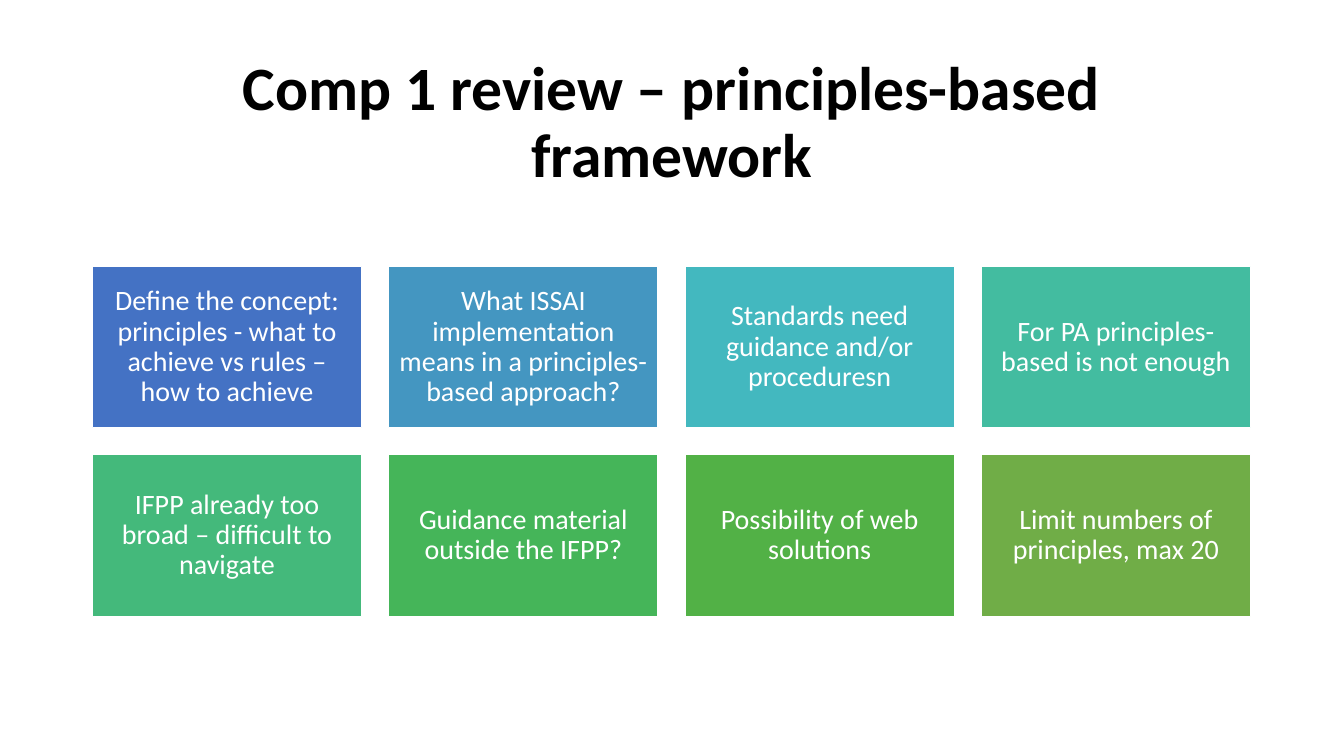
import pptx
import pptx.util
import pptx.dml.color
import pptx.enum.shapes
import pptx.enum.text

Pt = pptx.util.Pt

COLOURS = {
    "text": "000000",
    "white": "FFFFFF",
    "blue": "4472C4",
    "sky": "4496C1",
    "cyan": "43B8BF",
    "teal": "43BCA0",
    "mint": "44B97B",
    "emerald": "45B559",
    "green": "52B146",
    "olive": "70AD47",
}

POINTS = [
    ("blue", "Define the concept: principles - what to achieve vs rules – how to achieve"),
    ("sky", "What ISSAI implementation means in a principles-based approach?"),
    ("cyan", "Standards need guidance and/or proceduresn"),
    ("teal", "For PA principles-based is not enough"),
    ("mint", "IFPP already too broad – difficult to navigate"),
    ("emerald", "Guidance material outside the IFPP?"),
    ("green", "Possibility of web solutions"),
    ("olive", "Limit numbers of principles, max 20"),
]

COLUMNS = 4
LEFT, TOP = 66, 190.2
CARD_WIDTH, CARD_HEIGHT = 192.4, 115.4
GAP = 19.24
CARD_INSET = 6


def colour(name):
    return pptx.dml.color.RGBColor.from_string(COLOURS[name])


def write_text(box, text, size, colour_name, space_after, bold=False):
    frame = box.text_frame
    frame.word_wrap = True
    frame.auto_size = pptx.enum.text.MSO_AUTO_SIZE.NONE
    frame.vertical_anchor = pptx.enum.text.MSO_ANCHOR.MIDDLE
    para = frame.paragraphs[0]
    para.alignment = pptx.enum.text.PP_ALIGN.CENTER
    para.line_spacing = 0.9
    para.space_before = Pt(0)
    para.space_after = Pt(space_after)
    span = para.add_run()
    span.text = text
    span.font.name = "Calibri"
    span.font.size = Pt(size)
    span.font.bold = bold
    span.font.color.rgb = colour(colour_name)


def add_title(page, text):
    title = page.shapes.title
    title.left, title.top = Pt(66), Pt(44)
    title.width, title.height = Pt(828), Pt(89)
    write_text(title, text, 44, "text", 6, bold=True)


def add_card(page, left, top, fill, text):
    card = page.shapes.add_shape(
        pptx.enum.shapes.MSO_SHAPE.RECTANGLE,
        Pt(left), Pt(top), Pt(CARD_WIDTH), Pt(CARD_HEIGHT),
    )
    card.shadow.inherit = False
    card.fill.solid()
    card.fill.fore_color.rgb = colour(fill)
    card.line.color.rgb = colour("white")
    card.line.width = Pt(1)
    frame = card.text_frame
    frame.margin_left = frame.margin_right = Pt(CARD_INSET)
    frame.margin_top = frame.margin_bottom = Pt(CARD_INSET)
    write_text(card, text, 20, "white", 7)


def main():
    deck = pptx.Presentation()
    deck.slide_width, deck.slide_height = Pt(960), Pt(540)
    page = deck.slides.add_slide(deck.slide_layouts.get_by_name("Title Only"))
    add_title(page, "Comp 1 review – principles-based framework")
    for index, (fill, text) in enumerate(POINTS):
        row, column = divmod(index, COLUMNS)
        left = LEFT + column * (CARD_WIDTH + GAP)
        top = TOP + row * (CARD_HEIGHT + GAP)
        add_card(page, left, top, fill, text)
    deck.save("out.pptx")


if __name__ == "__main__":
    main()
